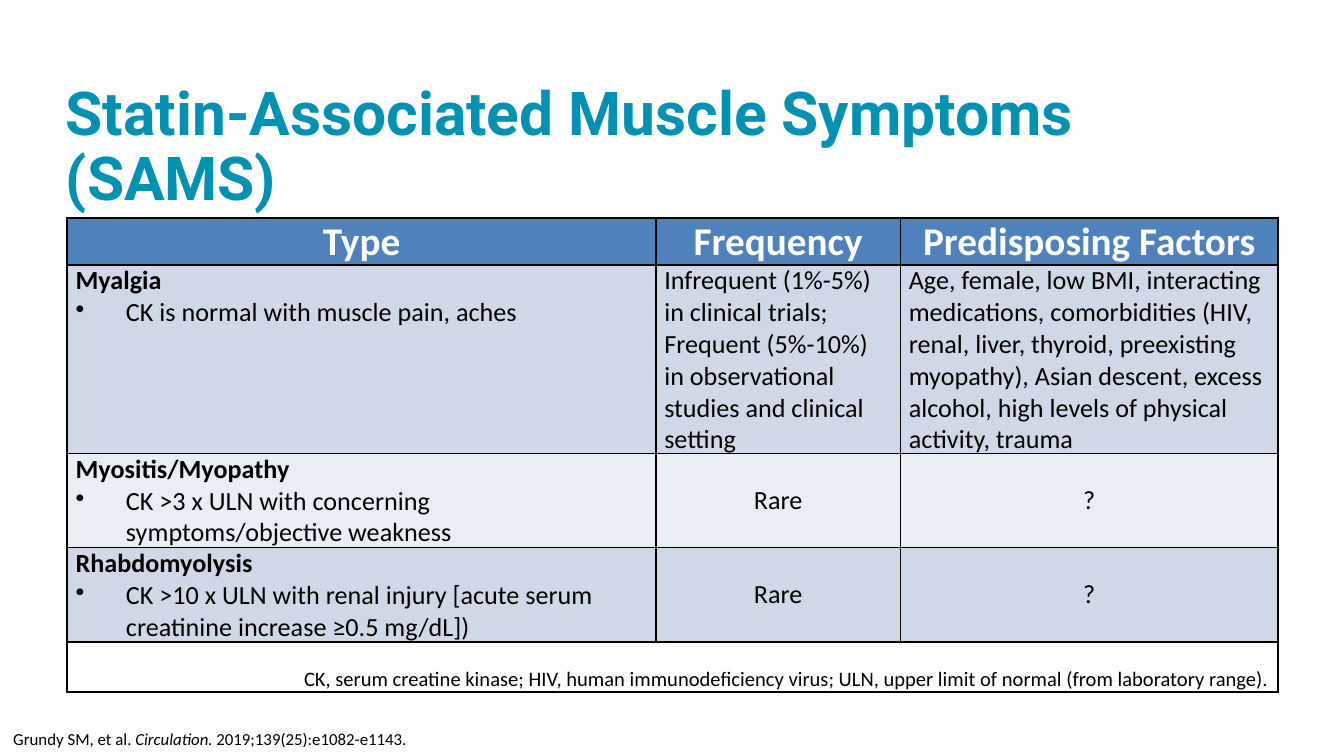
"""Build the slide on statin-associated muscle symptoms."""
from lxml import etree
from pptx import Presentation
from pptx import util as u
from pptx.dml import color
from pptx.enum import text
from pptx.oxml import ns

COLOURS = {"title": "0091B3", "header": "4F81BD", "dark_band": "D0D8E8",
           "light_band": "E9EDF4", "white": "FFFFFF", "black": "000000"}
COLUMN_WIDTHS = (315.4, 131, 202.3)
ROW_HEIGHTS = (25.2, 97.2, 49, 49, 27)
HEADINGS = ("Type", "Frequency", "Predisposing Factors")
TYPES = (
    ("Myalgia", "CK is normal with muscle pain, aches"),
    ("Myositis/Myopathy", "CK >3 x ULN with concerning symptoms/objective weakness"),
    ("Rhabdomyolysis",
     "CK >10 x ULN with renal injury [acute serum creatinine increase ≥0.5 mg/dL])"),
)
FREQUENCY = ("Infrequent (1%-5%) in clinical trials;",
             "Frequent (5%-10%) in observational studies and clinical setting")
FACTORS = ("Age, female, low BMI, interacting medications, comorbidities (HIV, renal, "
           "liver, thyroid, preexisting myopathy), Asian descent, excess alcohol, "
           "high levels of physical activity, trauma")
ABBREVIATIONS = ("CK, serum creatine kinase; HIV, human immunodeficiency virus; "
                 "ULN, upper limit of normal (from laboratory range).")
LEFT, CENTER, RIGHT = (text.PP_ALIGN.LEFT, text.PP_ALIGN.CENTER, text.PP_ALIGN.RIGHT)
TOP, MIDDLE, BOTTOM = (text.MSO_ANCHOR.TOP, text.MSO_ANCHOR.MIDDLE, text.MSO_ANCHOR.BOTTOM)


def add_span(para, words, size, colour="black", bold=False, italic=False, font="Calibri"):
    """Add one formatted run to a paragraph."""
    span = para.add_run()
    span.text = words
    span.font.name = font
    span.font.size = u.Pt(size)
    span.font.bold = bold
    span.font.italic = italic
    span.font.color.rgb = color.RGBColor.from_string(COLOURS[colour])


def add_bullet(para):
    """Give a paragraph a bullet with a hanging indent."""
    properties = para._p.get_or_add_pPr()
    properties.set("marL", str(u.Pt(27)))
    properties.set("indent", str(u.Pt(-27)))
    etree.SubElement(properties, ns.qn("a:buChar"), char="•")


def add_borders(cell):
    """Draw a thin black line on each side of a cell."""
    properties = cell._tc.get_or_add_tcPr()
    for side in ("lnL", "lnR", "lnT", "lnB"):
        line = etree.SubElement(properties, ns.qn(f"a:{side}"), w=str(u.Pt(1)))
        fill = etree.SubElement(line, ns.qn("a:solidFill"))
        etree.SubElement(fill, ns.qn("a:srgbClr"), val=COLOURS["black"])


def style_cell(cell, fill, anchor=TOP):
    """Set the borders, fill, margins and anchor of a cell."""
    add_borders(cell)
    cell.fill.solid()
    cell.fill.fore_color.rgb = color.RGBColor.from_string(COLOURS[fill])
    cell.margin_left = cell.margin_right = u.Pt(4.5)
    cell.margin_top = cell.margin_bottom = 0
    cell.vertical_anchor = anchor


def fill_cell(cell, lines, size=14, align=LEFT, colour="black", bold=False):
    """Write one paragraph per line into a cell."""
    for index, words in enumerate(lines):
        para = cell.text_frame.add_paragraph() if index else cell.text_frame.paragraphs[0]
        para.alignment = align
        add_span(para, words, size, colour, bold)


def fill_type_cell(cell, name, finding):
    """Write a bold symptom name above its bulleted finding."""
    fill_cell(cell, [name], bold=True)
    para = cell.text_frame.add_paragraph()
    add_bullet(para)
    add_span(para, finding, 14)


def add_symptom_table(page):
    """Add the table of symptom types, frequency and factors."""
    table = page.shapes.add_table(
        len(ROW_HEIGHTS), len(COLUMN_WIDTHS), u.Pt(36), u.Pt(116.8),
        u.Pt(sum(COLUMN_WIDTHS)), u.Pt(sum(ROW_HEIGHTS))).table
    for column, width in zip(table.columns, COLUMN_WIDTHS):
        column.width = u.Pt(width)
    for row, height in zip(table.rows, ROW_HEIGHTS):
        row.height = u.Pt(height)

    for cell, heading in zip(table.rows[0].cells, HEADINGS):
        style_cell(cell, "header", BOTTOM)
        fill_cell(cell, [heading], 21, CENTER, "white", True)

    for number, (name, finding) in enumerate(TYPES, start=1):
        cells = list(table.rows[number].cells)
        common = number == 1
        for column, cell in enumerate(cells):
            style_cell(cell, "dark_band" if number % 2 else "light_band",
                       TOP if common or column == 0 else MIDDLE)
        fill_type_cell(cells[0], name, finding)
        align = LEFT if common else CENTER
        fill_cell(cells[1], FREQUENCY if common else ["Rare"], align=align)
        fill_cell(cells[2], [FACTORS if common else "?"], align=align)

    last = len(ROW_HEIGHTS) - 1
    for cell in table.rows[last].cells:
        style_cell(cell, "white", BOTTOM)
    table.cell(last, 0).merge(table.cell(last, len(COLUMN_WIDTHS) - 1))
    fill_cell(table.cell(last, 0), [ABBREVIATIONS], 11, RIGHT)


def add_title(page):
    """Add the slide title."""
    box = page.shapes.add_textbox(u.Pt(35.3), u.Pt(44.6), u.Pt(648), u.Pt(56.2))
    frame = box.text_frame
    frame.word_wrap = True
    frame.margin_left = frame.margin_right = frame.margin_top = frame.margin_bottom = 0
    para = frame.paragraphs[0]
    para.line_spacing = 0.9
    add_span(para, "Statin-Associated Muscle Symptoms (SAMS)", 32.4, "title", True, font="Roboto")


def add_citation(page):
    """Add the source citation at the foot of the slide."""
    box = page.shapes.add_textbox(0, u.Pt(386.6), u.Pt(226.8), u.Pt(18))
    box.text_frame.word_wrap = False
    box.text_frame.auto_size = text.MSO_AUTO_SIZE.SHAPE_TO_FIT_TEXT
    para = box.text_frame.paragraphs[0]
    add_span(para, "Grundy SM, et al. ", 9)
    add_span(para, "Circulation.", 9, italic=True)
    add_span(para, " 2019;139(25):e1082-e1143.", 9)


def main():
    """Build and save the deck."""
    deck = Presentation()
    deck.slide_width, deck.slide_height = u.Pt(720), u.Pt(405)
    page = deck.slides.add_slide(deck.slide_layouts[6])
    add_title(page)
    add_symptom_table(page)
    add_citation(page)
    deck.save("out.pptx")


if __name__ == "__main__":
    main()
